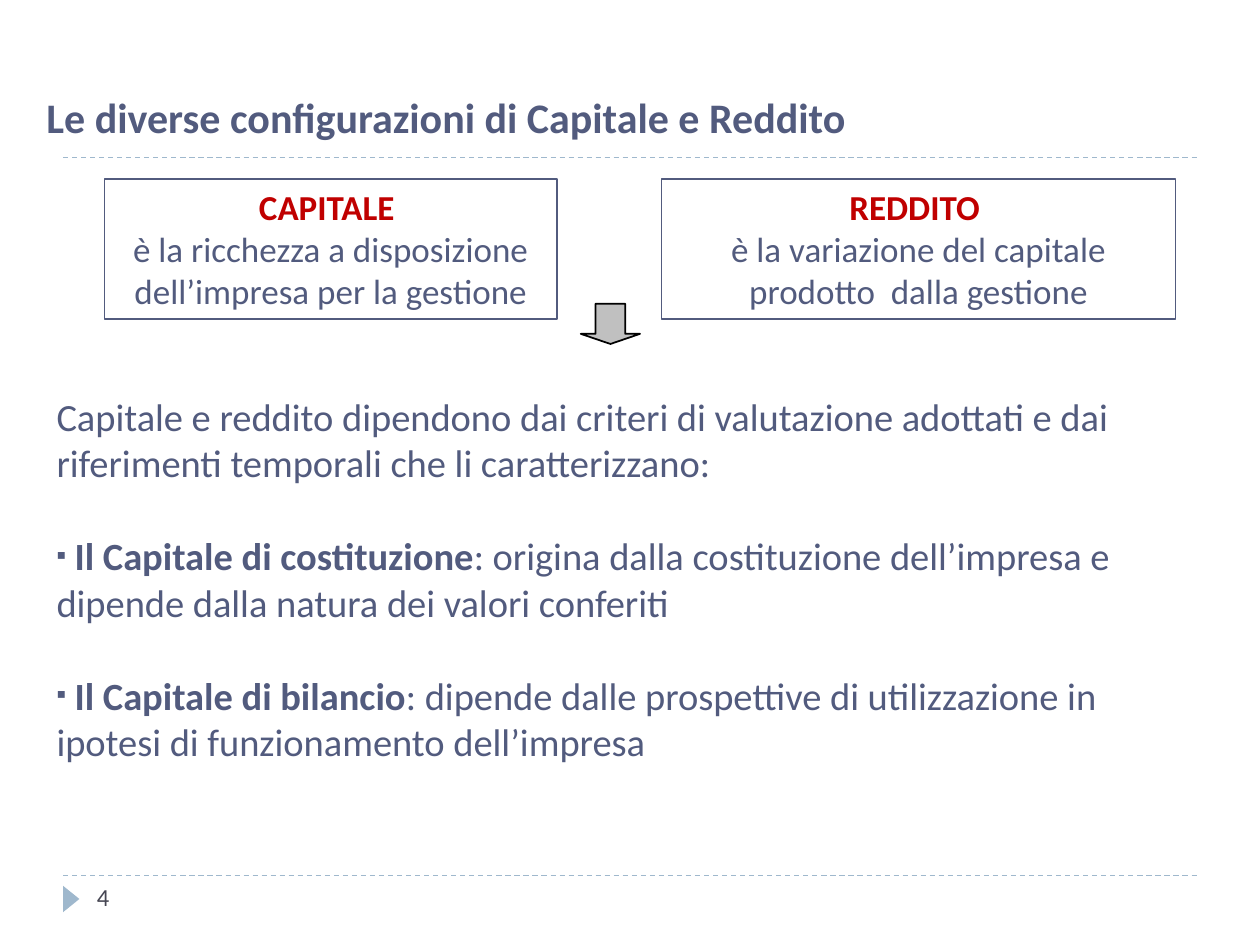
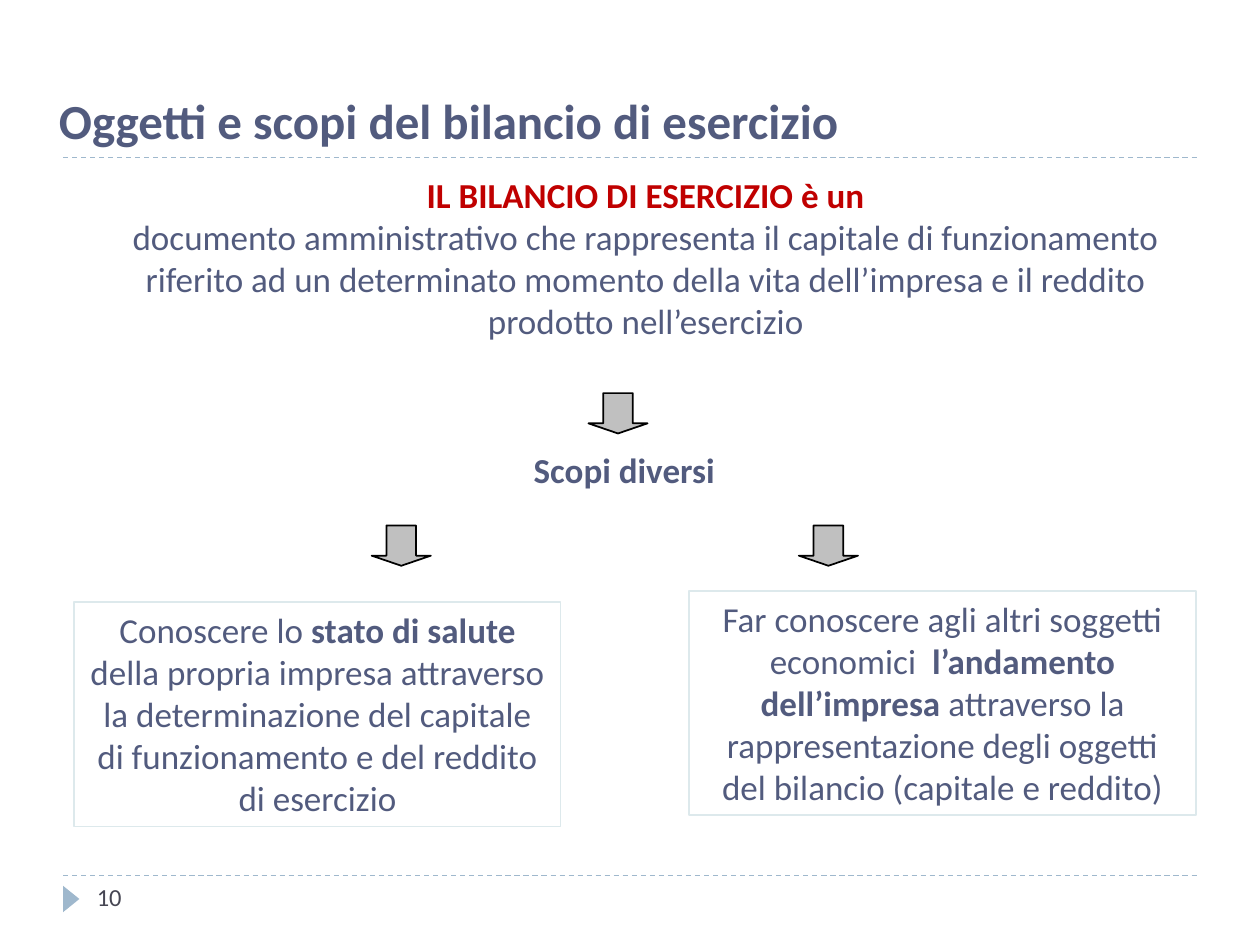
"""Build two slides on capital, income and the annual financial statements."""
from dataclasses import dataclass

from lxml import etree
from pptx import Presentation
from pptx.dml.color import RGBColor
from pptx.enum import dml, shapes, text
from pptx.oxml import ns
from pptx.util import Pt


@dataclass(frozen=True)
class Theme:
    font: str = "Calibri"
    ink: str = "525B7E"
    accent: str = "C00000"
    rule: str = "9FB8CD"
    pale: str = "DDE9EC"
    number: str = "464653"
    arrow: str = "C0C0C0"
    arrow_edge: str = "000000"
    body_size: int = 22
    box_size: int = 20
    number_size: int = 14
    blank_line: float = 26.85


THEME = Theme()
STYLES = {
    "plain": (THEME.ink, False),
    "bold": (THEME.ink, True),
    "accent": (THEME.accent, True),
    "number": (THEME.number, False),
}
WIDTH, HEIGHT = 720, 540
MARGIN = 36
RULES = (90, 500.4)
ARROW_SIZE = (33.84, 23.04)

PAGES = [
    {
        "number": "4",
        "title": ("Le diverse configurazioni di Capitale e Reddito", 24, (19.44, 48.96, 670.32, 36)),
        "texts": [
            {
                "at": (25.2, 221.04, 668.88, 273.6),
                "size": THEME.body_size,
                "align": "left",
                "paras": [
                    [("Capitale e reddito dipendono dai criteri di valutazione adottati e dai "
                      "riferimenti temporali che li caratterizzano:", "plain")],
                    [(" Il Capitale di costituzione", "bold"),
                     (": origina dalla costituzione dell’impresa e dipende dalla natura "
                      "dei valori conferiti", "plain")],
                    [(" Il Capitale di bilancio", "bold"),
                     (": dipende dalle prospettive di utilizzazione in ipotesi di "
                      "funzionamento dell’impresa", "plain")],
                ],
                "bulleted_from": 1,
            },
            {
                "at": (59.76, 102.24, 258.48, 79.92),
                "border": THEME.ink,
                "paras": [
                    [("CAPITALE ", "accent")],
                    [("è la ricchezza a disposizione dell’impresa per la gestione", "plain")],
                ],
            },
            {
                "at": (378, 102.24, 293.76, 79.92),
                "border": THEME.ink,
                "paras": [
                    [("REDDITO ", "accent")],
                    [("è la variazione del capitale prodotto  dalla gestione", "plain")],
                ],
            },
        ],
        "arrows": [(331.92, 173.52)],
    },
    {
        "number": "10",
        "title": ("Oggetti e scopi del bilancio di esercizio", 28, (26.64, 48.24, 696.24, 41.04)),
        "texts": [
            {
                "at": (65.52, 95.76, 606.96, 102.96),
                "paras": [
                    [("IL BILANCIO DI ESERCIZIO è un", "accent")],
                    [("documento amministrativo che rappresenta il capitale di funzionamento "
                      "riferito ad un determinato momento della vita dell’impresa e il reddito "
                      "prodotto nell’esercizio", "plain")],
                ],
            },
            {
                "at": (53.28, 252.72, 606.96, 30.96),
                "paras": [[("Scopi diversi", "bold")]],
            },
            {
                "at": (42.48, 344.16, 277.92, 128.16),
                "border": THEME.pale,
                "paras": [
                    [("Conoscere lo ", "plain"),
                     ("stato di salute ", "bold"),
                     ("della propria impresa attraverso la determinazione del capitale di "
                      "funzionamento e del reddito di esercizio", "plain")],
                ],
            },
            {
                "at": (393.84, 337.68, 289.44, 128.16),
                "border": THEME.pale,
                "paras": [
                    [("Far conoscere agli altri soggetti economici  ", "plain"),
                     ("l’andamento dell’impresa ", "bold"),
                     ("attraverso la rappresentazione degli oggetti del bilancio "
                      "(capitale e reddito)", "plain")],
                ],
            },
        ],
        "arrows": [(336.24, 224.64), (212.4, 300.24), (456.48, 300.24)],
    },
]


def color(value):
    return RGBColor.from_string(value)


def points(values):
    return [Pt(value) for value in values]


def add_shape(page, kind, at, fill=None, border=None):
    shape = page.shapes.add_shape(kind, *points(at))
    shape.shadow.inherit = False
    if fill:
        shape.fill.solid()
        shape.fill.fore_color.rgb = color(fill)
    else:
        shape.fill.background()
    if border:
        shape.line.color.rgb = color(border)
        shape.line.width = Pt(1)
    else:
        shape.line.fill.background()
    return shape


def add_bullet(para):
    props = para._p.get_or_add_pPr()
    props.set("marL", "0")
    props.set("indent", "0")
    for tag, name, value in (("buSzPct", "val", "70000"),
                             ("buFont", "typeface", THEME.font),
                             ("buChar", "char", "▪")):
        etree.SubElement(props, ns.qn(f"a:{tag}")).set(name, value)


def add_text(page, at, paras, size=THEME.box_size, align="center", border=None, bulleted_from=None):
    if border:
        box = add_shape(page, shapes.MSO_SHAPE.RECTANGLE, at, border=border)
    else:
        box = page.shapes.add_textbox(*points(at))
    frame = box.text_frame
    frame.word_wrap = True
    frame.vertical_anchor = text.MSO_ANCHOR.TOP
    for index, spans in enumerate(paras):
        para = frame.paragraphs[0] if index == 0 else frame.add_paragraph()
        para.alignment = text.PP_ALIGN[align.upper()]
        if bulleted_from is not None and index >= bulleted_from:
            para.space_before = Pt(THEME.blank_line)
            add_bullet(para)
        for words, style in spans:
            span = para.add_run()
            span.text = words
            span.font.name = THEME.font
            span.font.size = Pt(size)
            ink, span.font.bold = STYLES[style]
            span.font.color.rgb = color(ink)


def add_rule(page, y):
    rule = page.shapes.add_connector(
        shapes.MSO_CONNECTOR.STRAIGHT, *points((MARGIN, y, WIDTH - MARGIN, y)))
    rule.line.color.rgb = color(THEME.rule)
    rule.line.width = Pt(0.75)
    rule.line.dash_style = dml.MSO_LINE.DASH
    etree.SubElement(rule._element.spPr, ns.qn("a:effectLst"))


def add_frame(page, title, number):
    for y in RULES:
        add_rule(page, y)
    marker = add_shape(page, shapes.MSO_SHAPE.ISOSCELES_TRIANGLE,
                       (33.12, 509.04, 15.12, 9.36), fill=THEME.rule)
    marker.rotation = 90
    words, size, at = title
    add_text(page, at, [[(words, "bold")]], size, "left")
    add_text(page, (48.24, 500.4, 156.24, 28.8), [[(number, "number")]], THEME.number_size, "left")


def main():
    deck = Presentation()
    deck.slide_width, deck.slide_height = points((WIDTH, HEIGHT))
    for content in PAGES:
        page = deck.slides.add_slide(deck.slide_layouts[6])
        add_frame(page, content["title"], content["number"])
        for item in content["texts"]:
            add_text(page, **item)
        for corner in content["arrows"]:
            arrow = add_shape(page, shapes.MSO_SHAPE.DOWN_ARROW, corner + ARROW_SIZE,
                              THEME.arrow, THEME.arrow_edge)
            arrow.adjustments[0] = 0.5
            arrow.adjustments[1] = 0.25
    deck.save("out.pptx")


if __name__ == "__main__":
    main()
